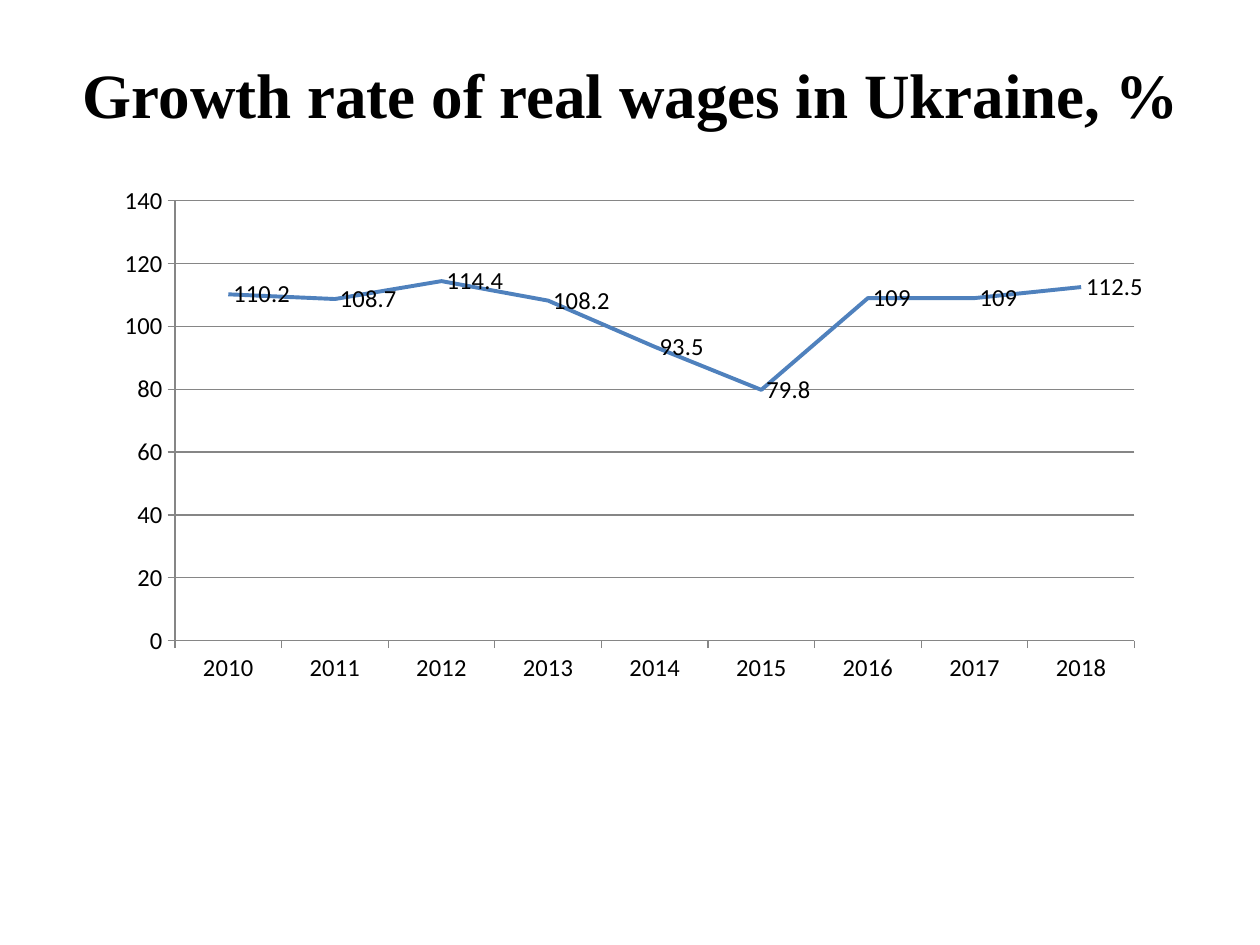
from dataclasses import dataclass

from lxml.etree import SubElement
from pptx import Presentation
from pptx.chart.chart import Chart
from pptx.chart.data import CategoryChartData
from pptx.dml.color import RGBColor
from pptx.enum.chart import XL_CHART_TYPE, XL_LABEL_POSITION, XL_TICK_LABEL_POSITION, XL_TICK_MARK
from pptx.enum.text import MSO_ANCHOR, PP_ALIGN
from pptx.oxml.ns import qn
from pptx.util import Inches, Pt

WIDTH, HEIGHT = Inches(10), Inches(7.5)
BLACK, GRAY, BLUE = "000000", "868686", "4F81BD"
WAGE_GROWTH = {
    "2010": 110.2, "2011": 108.7, "2012": 114.4, "2013": 108.2, "2014": 93.5,
    "2015": 79.8, "2016": 109, "2017": 109, "2018": 112.5,
}


@dataclass
class Area:
    """A rectangle in shares of whatever contains it."""
    x: float
    y: float
    w: float
    h: float

    def on_slide(self) -> tuple[int, int, int, int]:
        return (int(self.x * WIDTH), int(self.y * HEIGHT),
                int(self.w * WIDTH), int(self.h * HEIGHT))


TITLE_AREA = Area(0.051, 0.07, 0.9, 0.113)
CHART_AREA = Area(0.083, 0.185, 0.835, 0.548)
PLOT_AREA = Area(0.067, 0.05, 0.912, 0.85)


def color(value: str) -> RGBColor:
    return RGBColor.from_string(value)


def set_font(font, *, size: float, name: str, bold: bool = False, fill: str = BLACK) -> None:
    font.size, font.name, font.bold = Pt(size), name, bold
    font.color.rgb = color(fill)


def write_text(box, text: str, *, line_spacing: float, space_after: float, **font_format) -> None:
    para = box.text_frame.paragraphs[0]
    para.alignment = PP_ALIGN.CENTER
    para.line_spacing, para.space_after = line_spacing, Pt(space_after)
    span = para.add_run()
    span.text = text
    set_font(span.font, **font_format)


def style_line(line, *, fill: str, width: float) -> None:
    line.color.rgb = color(fill)
    line.width = Pt(width)


def place_plot(chart: Chart, area: Area) -> None:
    """Fix the inner plot rectangle within the chart."""
    plot_area = chart.plots[0]._element.getparent()
    layout = plot_area.find(qn("c:layout"))
    if layout is None:
        layout = SubElement(plot_area, qn("c:layout"))
        plot_area.insert(0, layout)
    manual = SubElement(layout, qn("c:manualLayout"))
    settings = {"layoutTarget": "inner", "xMode": "edge", "yMode": "edge",
                "x": area.x, "y": area.y, "w": area.w, "h": area.h}
    for tag, value in settings.items():
        SubElement(manual, qn(f"c:{tag}")).set("val", str(value))


def add_wage_chart(page) -> None:
    data = CategoryChartData()
    data.categories = list(WAGE_GROWTH)
    data.add_series("Series 1", list(WAGE_GROWTH.values()))
    chart = page.shapes.add_chart(XL_CHART_TYPE.LINE, *CHART_AREA.on_slide(), data).chart
    chart.has_legend = chart.has_title = False
    set_font(chart.font, size=14, name="Calibri")
    place_plot(chart, PLOT_AREA)

    # Axes and gridlines
    for axis in (chart.category_axis, chart.value_axis):
        axis.major_tick_mark = XL_TICK_MARK.OUTSIDE
        axis.minor_tick_mark = XL_TICK_MARK.NONE
        axis.tick_label_position = XL_TICK_LABEL_POSITION.NEXT_TO_AXIS
        style_line(axis.format.line, fill=GRAY, width=0.75)
        set_font(axis.tick_labels.font, size=14, name="Calibri")
    values = chart.value_axis
    values.minimum_scale, values.maximum_scale, values.major_unit = 0, 140, 20
    values.has_major_gridlines = True
    style_line(values.major_gridlines.format.line, fill=GRAY, width=0.75)

    # Line and value labels
    plot = chart.plots[0]
    plot.vary_by_categories = False
    series = plot.series[0]
    series.smooth = False
    style_line(series.format.line, fill=BLUE, width=2.25)
    labels = series.data_labels
    labels.show_value = True
    labels.position = XL_LABEL_POSITION.RIGHT
    set_font(labels.font, size=14, name="Calibri")


def main() -> None:
    deck = Presentation()
    deck.slide_width, deck.slide_height = WIDTH, HEIGHT
    page = deck.slides.add_slide(deck.slide_layouts[5])

    # Title, raised within its box by the bottom margin
    title = page.shapes.title
    title.left, title.top, title.width, title.height = TITLE_AREA.on_slide()
    frame = title.text_frame
    frame.word_wrap = True
    frame.vertical_anchor = MSO_ANCHOR.MIDDLE
    frame.margin_bottom = Inches(0.55)
    write_text(title, "Growth rate of real wages in Ukraine, %", line_spacing=1.15,
               space_after=10, size=36, name="Times New Roman", bold=True)

    add_wage_chart(page)
    deck.save("out.pptx")


if __name__ == "__main__":
    main()
